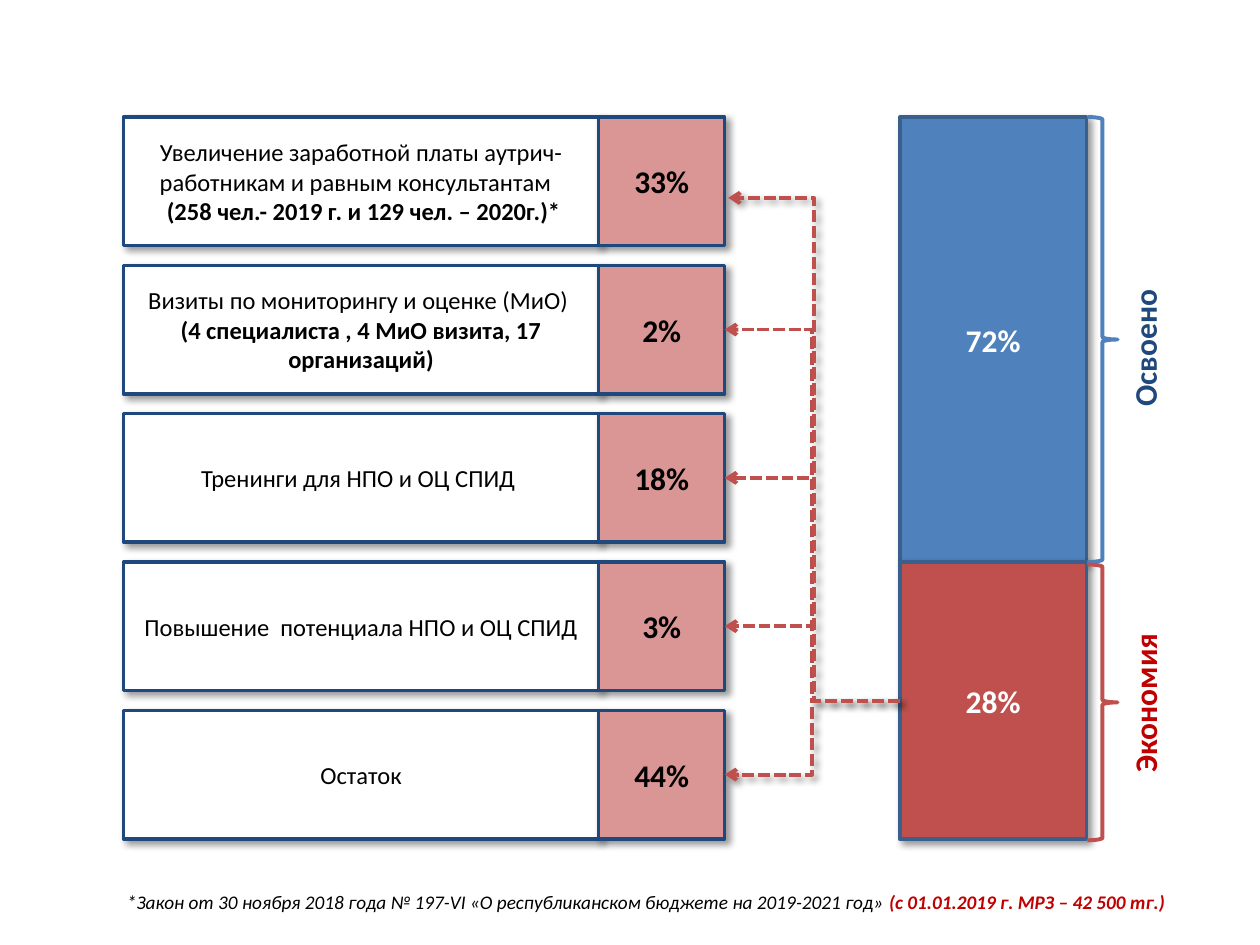
import pptx
import pptx.dml.color
import pptx.enum.dml
import pptx.enum.shapes
import pptx.enum.text
import pptx.oxml
import pptx.oxml.ns
import pptx.util
from pptx.util import Cm, Pt

COLOURS = {
    "white": "FFFFFF", "black": "000000", "navy": "1F497D", "blue": "4F81BD",
    "edge": "3A5F8C", "red": "C0504D", "pink": "D99694", "crimson": "C00000",
}
SHAPES = pptx.enum.shapes.MSO_SHAPE
CENTRE = pptx.enum.text.PP_ALIGN.CENTER

TOP = 2.36
ROW_PITCH, ROW_HEIGHT = 2.99, 2.59
LABEL_LEFT, LABEL_WIDTH, SHARE_WIDTH = 2.49, 9.58, 2.54
BAR_LEFT, BAR_WIDTH = 18.14, 3.76
SPENT_HEIGHT, SAVED_HEIGHT = 8.97, 5.59

# Plain line, bold line, share of the savings
ROWS = [
    ("Увеличение заработной платы аутрич-работникам и равным консультантам  ",
     " (258 чел.- 2019 г. и 129 чел. – 2020г.)*", "33%"),
    ("Визиты по мониторингу и оценке (МиО) ",
     "(4 специалиста , 4 МиО визита, 17 организаций)", "2%"),
    ("Тренинги для НПО и ОЦ СПИД ", None, "18%"),
    ("Повышение  потенциала НПО и ОЦ СПИД", None, "3%"),
    ("Остаток", None, "44%"),
]


def rgb(name):
    return pptx.dml.color.RGBColor.from_string(COLOURS[name])


def add_span(para, text, size, colour, bold=False, italic=False):
    span = para.add_run()
    span.text = text
    span.font.name = "Calibri"
    span.font.size = Pt(size)
    span.font.bold = bold
    span.font.italic = italic
    span.font.color.rgb = rgb(colour)


def effect_list(shadowed):
    """Return an effect list that is empty or holds a soft lower-right shadow."""
    shadow = (
        '<a:outerShdw blurRad="50800" dist="38100" dir="2700000" algn="tl" rotWithShape="0">'
        '<a:srgbClr val="000000"><a:alpha val="40000"/></a:srgbClr></a:outerShdw>'
    ) if shadowed else ""
    return pptx.oxml.parse_xml(
        f'<a:effectLst {pptx.oxml.ns.nsdecls("a")}>{shadow}</a:effectLst>')


def add_box(page, left, top, width, height, fill, line, lines, size):
    """Add a shadowed rectangle; lines holds (text, colour, bold) per paragraph."""
    box = page.shapes.add_shape(
        SHAPES.RECTANGLE, Cm(left), Cm(top), Cm(width), Cm(height))
    box.fill.solid()
    box.fill.fore_color.rgb = rgb(fill)
    box.line.color.rgb = rgb(line)
    box.line.width = Pt(2)
    box.shadow.inherit = False
    empty = box._element.spPr.find(pptx.oxml.ns.qn("a:effectLst"))
    box._element.spPr.replace(empty, effect_list(True))
    frame = box.text_frame
    frame.word_wrap = True
    frame.vertical_anchor = pptx.enum.text.MSO_ANCHOR.MIDDLE
    for number, (text, colour, bold) in enumerate(lines):
        para = frame.add_paragraph() if number else frame.paragraphs[0]
        para.alignment = CENTRE
        add_span(para, text, size, colour, bold)
    return box


def add_row(page, top, plain, strong, share):
    """Add an expense label with its share and return the share box."""
    lines = [(plain, "black", False)]
    if strong:
        lines.append((strong, "black", True))
    add_box(page, LABEL_LEFT, top, LABEL_WIDTH, ROW_HEIGHT,
            "white", "navy", lines, 14)
    return add_box(page, LABEL_LEFT + LABEL_WIDTH, top, SHARE_WIDTH, ROW_HEIGHT,
                   "pink", "navy", [(share, "black", True)], 18)


def add_arrow(page, source, target, shadowed):
    """Run a dashed elbow arrow from source to a box or to an (x, y) point."""
    is_point = isinstance(target, tuple)
    end = target if is_point else (
        target.left + target.width, target.top + target.height // 2)
    arrow = page.shapes.add_connector(
        pptx.enum.shapes.MSO_CONNECTOR.ELBOW,
        source.left, source.top + source.height // 2, *end)
    arrow.begin_connect(source, 1)
    if not is_point:
        arrow.end_connect(target, 3)
    arrow.line.color.rgb = rgb("red")
    arrow.line.width = Pt(2.25)
    arrow.line.dash_style = pptx.enum.dml.MSO_LINE.SQUARE_DOT
    arrow.line._get_or_add_ln().append(pptx.oxml.parse_xml(
        f'<a:tailEnd {pptx.oxml.ns.nsdecls("a")} type="arrow"/>'))
    arrow._element.spPr.append(effect_list(shadowed))


def add_brace(page, top, height, colour):
    brace = page.shapes.add_shape(
        SHAPES.RIGHT_BRACE, Cm(21.92), Cm(top), Cm(0.61), Cm(height))
    brace.fill.background()
    brace.line.color.rgb = rgb(colour)
    brace.line.width = Pt(2.25)
    brace.shadow.inherit = False


def add_caption(page, left, top, width, height, rotation=0):
    """Add an unwrapped text box and return its paragraph."""
    box = page.shapes.add_textbox(Cm(left), Cm(top), Cm(width), Cm(height))
    box.rotation = rotation
    box.text_frame.word_wrap = False
    box.text_frame.auto_size = pptx.enum.text.MSO_AUTO_SIZE.SHAPE_TO_FIT_TEXT
    return box.text_frame.paragraphs[0]


def main():
    deck = pptx.Presentation()
    deck.slide_width, deck.slide_height = Cm(25.4), Cm(19.05)
    page = deck.slides.add_slide(deck.slide_layouts[6])

    add_box(page, BAR_LEFT, TOP, BAR_WIDTH, SPENT_HEIGHT,
            "blue", "edge", [("72%", "white", True)], 18)
    saved = add_box(page, BAR_LEFT, TOP + SPENT_HEIGHT, BAR_WIDTH, SAVED_HEIGHT,
                    "red", "edge", [("28%", "white", True)], 18)

    shares = [add_row(page, TOP + number * ROW_PITCH, *row)
              for number, row in enumerate(ROWS)]
    for share in shares[1:]:
        add_arrow(page, saved, share, shadowed=share is shares[-1])
    add_arrow(page, saved, (Cm(14.68), Cm(3.99)), shadowed=True)

    add_brace(page, TOP, SPENT_HEIGHT, "blue")
    add_brace(page, TOP + SPENT_HEIGHT + 0.05, SAVED_HEIGHT - 0.03, "red")
    add_span(add_caption(page, 21.56, 6.43, 3.02, 1.02, 270),
             "Освоено", 18, "navy", bold=True)
    add_span(add_caption(page, 21.41, 13.64, 3.33, 1.02, 270),
             "Экономия", 18, "crimson", bold=True)

    note = add_caption(page, 2.31, 17.83, 21.67, 0.74)
    add_span(note, "*Закон от 30 ноября 2018 года № 197-VI «О республиканском "
             "бюджете на 2019-2021 год» ", 11, "black", italic=True)
    add_span(note, "(с 01.01.2019 г. МРЗ – 42 500 тг.)", 11, "crimson",
             bold=True, italic=True)

    deck.save("out.pptx")


if __name__ == "__main__":
    main()
